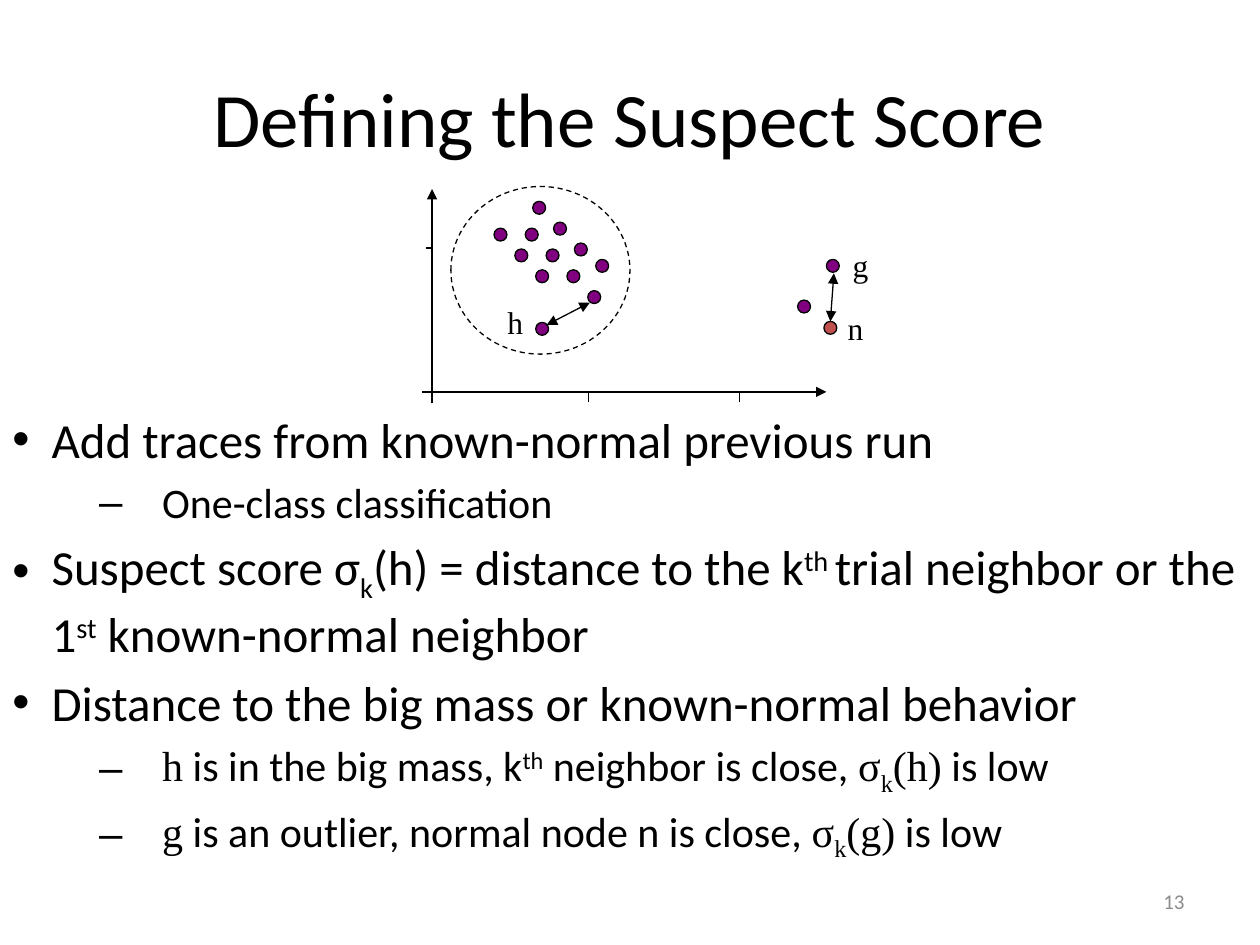
from pptx import Presentation
from pptx.dml.color import RGBColor as Rgb
from pptx.enum.dml import MSO_LINE as Dash
from pptx.enum.shapes import MSO_CONNECTOR as Conn, MSO_SHAPE as Shape
from pptx.enum.text import MSO_ANCHOR as Anchor, MSO_AUTO_SIZE as Fit, PP_ALIGN as Align
from pptx.oxml.ns import qn
from pptx.util import Cm, Pt
from lxml.etree import SubElement as Sub

BLACK = Rgb(0, 0, 0)
GREY = Rgb(0x8C, 0x8C, 0x8C)
PURPLE = Rgb(0x80, 0, 0x80)
RED = Rgb(0xC0, 0x50, 0x4D)
SANS = "Calibri"
SERIF = "Times New Roman"
SUB, SUP = -25, 30
DOT = 0.26
STEP = 0.42

LEVELS = [
    {"size": 28, "mark": "•", "left": 0.79, "hang": 0.79},
    {"size": 24, "mark": "–", "left": 3.02, "hang": 1.27},
]

POINTS = [
    (0, [("Add traces from known-normal previous run",)]),
    (1, [("One-class classification",)]),
    (0, [("Suspect score σ",), ("k", SUB), ("(h) = distance to the k",), ("th ", SUP),
         ("trial neighbor or the 1",), ("st", SUP), (" known-normal neighbor",)]),
    (0, [("Distance to the big mass or known-normal behavior",)]),
    (1, [("h", 0, SERIF), (" is in the big mass, k",), ("th", SUP),
         (" neighbor is close, ",), ("σ", 0, SERIF), ("k", SUB, SERIF),
         ("(h)", 0, SERIF), (" is low",)]),
    (1, [("g", 0, SERIF), (" is an outlier, normal node n is close, ",),
         ("σ", 0, SERIF), ("k", SUB, SERIF), ("(g)", 0, SERIF), (" is low",)]),
]

DIAGONALS = [(9.96, 4.6, 3), (10.59, 4.6, 4), (10.74, 4.06, 3)]
SINGLES = [(12.01, 5.23), (10.8, 6.5), (16.66, 5.23), (16.08, 6.05)]
LABELS = [("g", 16.94, 4.83), ("h", 9.98, 5.99), ("n", 16.84, 6.1)]


def style(run, size, color=BLACK, face=SANS):
    run.font.size = Pt(size)
    run.font.color.rgb = color
    run.font.name = face


def add_box(slide, x, y, w, h):
    box = slide.shapes.add_textbox(Cm(x), Cm(y), Cm(w), Cm(h))
    box.text_frame.word_wrap = True
    return box.text_frame


def add_text(slide, text, x, y, w, h, size, align, color=BLACK, face=SANS, anchor=Anchor.MIDDLE):
    frame = add_box(slide, x, y, w, h)
    frame.text = text
    frame.vertical_anchor = anchor
    para = frame.paragraphs[0]
    para.alignment = align
    style(para.runs[0], size, color, face)
    return frame


def add_label(slide, text, x, y):
    frame = add_text(slide, text, x, y, 1.07, 1.04, 18, Align.LEFT, face=SERIF, anchor=Anchor.TOP)
    frame.auto_size = Fit.SHAPE_TO_FIT_TEXT


def add_point(para, level, parts):
    rule = LEVELS[level]
    para.level = level
    para.space_before = Pt(rule["size"] * 0.2)
    props = para._p.get_or_add_pPr()
    props.set("marL", str(Cm(rule["left"])))
    props.set("indent", str(-Cm(rule["hang"])))
    Sub(props, qn("a:buFont"), typeface="Arial")
    Sub(props, qn("a:buChar"), char=rule["mark"])
    for text, base, face in ((*part, 0, SANS)[:1] + (*part[1:], *(0, SANS)[len(part) - 1:])
                             for part in parts):
        run = para.add_run()
        run.text = text
        style(run, rule["size"], face=face)
        if base:
            run._r.get_or_add_rPr().set("baseline", str(base * 1000))


def add_list(slide):
    frame = add_box(slide, 0, 8.13, 25.2, 9.5)
    for i, (level, parts) in enumerate(POINTS):
        para = frame.add_paragraph() if i else frame.paragraphs[0]
        add_point(para, level, parts)


def add_oval(slide, x, y, w, h, color=None):
    oval = slide.shapes.add_shape(Shape.OVAL, Cm(x), Cm(y), Cm(w), Cm(h))
    oval.shadow.inherit = False
    if color is None:
        oval.fill.background()
    else:
        oval.fill.solid()
        oval.fill.fore_color.rgb = color
    oval.line.color.rgb = BLACK
    oval.line.width = Pt(0.75)
    return oval


def add_dot(slide, x, y, color=PURPLE):
    add_oval(slide, x, y, DOT, DOT, color)


def add_line(slide, x1, y1, x2, y2, *ends):
    line = slide.shapes.add_connector(Conn.STRAIGHT, Cm(x1), Cm(y1), Cm(x2), Cm(y2))
    line.line.color.rgb = BLACK
    line.line.width = Pt(0.75)
    for end in ends:
        Sub(line.line._get_or_add_ln(), qn("a:" + end), type="triangle")
    Sub(line._element.spPr, qn("a:effectLst"))


def add_axes(slide):
    for x in (11.86, 14.91):
        add_line(slide, x, 7.9, x, 8.1)
    add_line(slide, 8.71, 5, 8.59, 5)
    add_line(slide, 8.71, 8.13, 8.71, 3.81, "tailEnd")
    add_line(slide, 8.51, 7.9, 16.66, 7.9, "tailEnd")


def add_plot(slide):
    add_oval(slide, 9.09, 3.76, 3.61, 3.38).line.dash_style = Dash.DASH
    add_axes(slide)
    for x, y, count in DIAGONALS:
        for i in range(count):
            add_dot(slide, x + i * STEP, y + i * STEP)
    for x, y in SINGLES:
        add_dot(slide, x, y)
    add_line(slide, 16.81, 5.51, 16.74, 6.48, "headEnd", "tailEnd")
    add_line(slide, 11.02, 6.55, 11.89, 6.1, "headEnd", "tailEnd")
    add_dot(slide, 16.61, 6.48, RED)
    for text, x, y in LABELS:
        add_label(slide, text, x, y)


def main():
    deck = Presentation()
    deck.slide_width, deck.slide_height = Cm(25.4), Cm(19.05)
    slide = deck.slides.add_slide(deck.slide_layouts[6])
    add_text(slide, "13", 18.21, 17.65, 5.92, 1.02, 12, Align.RIGHT, GREY)
    add_text(slide, "Defining the Suspect Score", 1.27, 0.76, 22.86, 3.18, 44, Align.CENTER)
    add_list(slide)
    add_plot(slide)
    deck.save("out.pptx")


if __name__ == "__main__":
    main()
